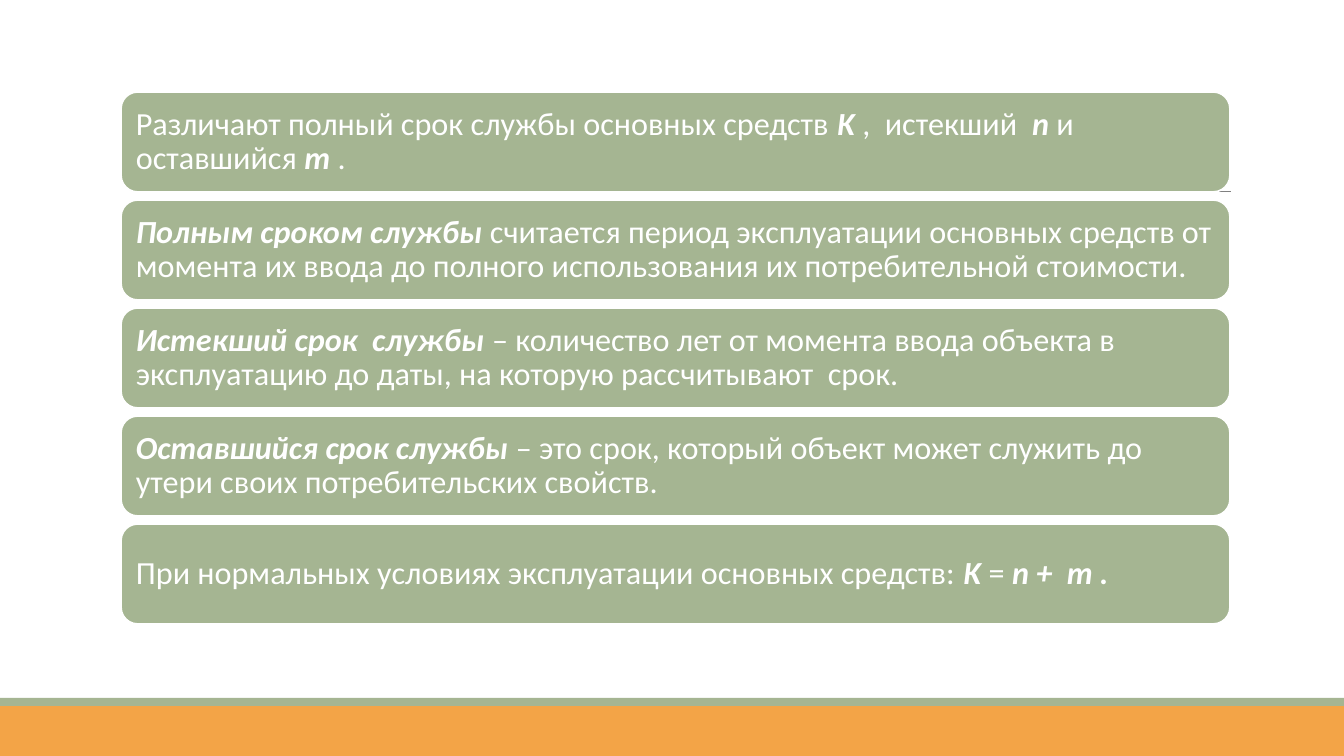
from pptx import Presentation
from pptx import util as u
from pptx.dml.color import RGBColor
from pptx.enum import shapes, text
from pptx.oxml.ns import qn
from lxml import etree

THEME = {
    "green": RGBColor.from_string("A5B592"),
    "orange": RGBColor.from_string("F3A447"),
    "gray": RGBColor.from_string("808080"),
    "white": RGBColor.from_string("FFFFFF"),
    "font": "Calibri",
    "size": 23,
}
EMU_PER_PX = 914400 / 100.8


def px(n):
    return u.Emu(round(n * EMU_PER_PX))


def write(sp, content, size=THEME["size"], color=THEME["white"], inset=10):
    """Fill a shape with text; parts between * marks are bold italic."""
    tf = sp.text_frame
    tf.word_wrap = True
    tf.vertical_anchor = text.MSO_ANCHOR.MIDDLE
    tf.margin_left = tf.margin_right = tf.margin_top = tf.margin_bottom = px(inset)
    p = tf.paragraphs[0]
    p.alignment = text.PP_ALIGN.LEFT
    p.line_spacing = 0.9
    for i, part in enumerate(content.split("*")):
        if part:
            r = p.add_run()
            r.text = part
            r.font.name = THEME["font"]
            r.font.size = u.Pt(size)
            r.font.color.rgb = color
            r.font.bold = r.font.italic = i % 2 == 1


prs = Presentation()
prs.slide_width, prs.slide_height = px(1344), px(756)
s = prs.slides.add_slide(prs.slide_layouts[6])

# Footer bands
for top, height, color in ((706, 50, "orange"), (698, 8, "green")):
    sp = s.shapes.add_shape(shapes.MSO_SHAPE.RECTANGLE, 0, px(top), px(1344), px(height))
    sp.shadow.inherit = False
    sp.fill.solid()
    sp.fill.fore_color.rgb = THEME[color]
    sp.line.fill.background()

# Title rule, mostly behind the first box
rule = s.shapes.add_connector(shapes.MSO_CONNECTOR.STRAIGHT, px(132), px(191), px(1231), px(191))
rule.line.color.rgb = THEME["gray"]
rule.line.width = u.Pt(0.5)
etree.SubElement(rule._element.spPr, qn("a:effectLst"))

# Definitions of service life, one box each
definitions = (
    "Различают полный срок службы основных средств *K *,  истекший  *n *и оставшийся *m* .",
    "*Полным сроком службы* считается период эксплуатации основных средств от момента "
    "их ввода до полного использования их потребительной стоимости.",
    "*Истекший срок  службы* – количество лет от момента ввода объекта в эксплуатацию "
    "до даты, на которую рассчитывают  срок.",
    "*Оставшийся срок службы* – это срок, который объект может служить до утери своих "
    "потребительских свойств.",
    "При нормальных условиях эксплуатации основных средств: *K *= *n +  m .*",
)
for i, definition in enumerate(definitions):
    sp = s.shapes.add_shape(shapes.MSO_SHAPE.ROUNDED_RECTANGLE,
                            px(121), px(92 + 108 * i), px(1109), px(100))
    sp.shadow.inherit = False
    sp.fill.solid()
    sp.fill.fore_color.rgb = THEME["green"]
    sp.line.color.rgb = THEME["white"]
    sp.line.width = u.Pt(1.25)
    write(sp, definition)

prs.save("out.pptx")
